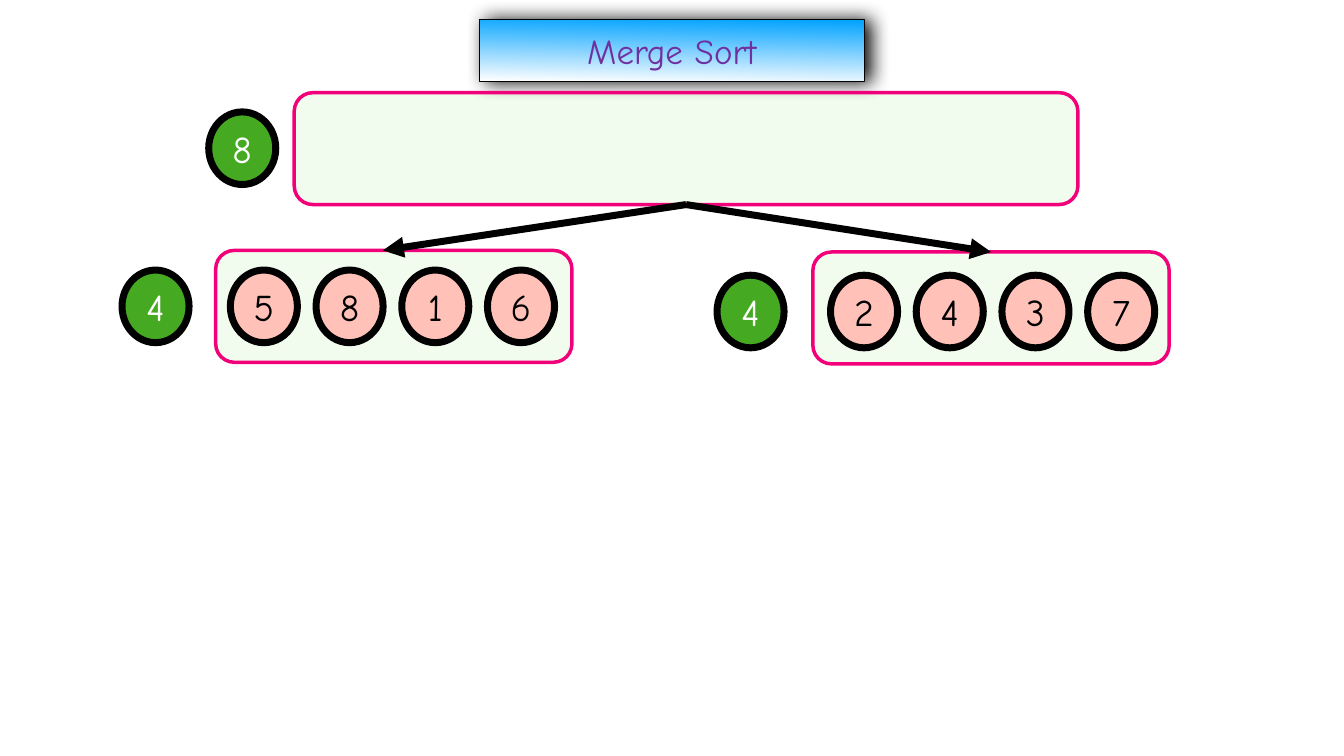
from dataclasses import dataclass

from lxml.etree import SubElement
from pptx import Presentation
from pptx.dml.color import RGBColor
from pptx.enum.shapes import MSO_CONNECTOR as Connector, MSO_SHAPE as Shape
from pptx.enum.text import MSO_ANCHOR as Anchor, MSO_AUTO_SIZE as AutoSize, PP_ALIGN as Align
from pptx.oxml import parse_xml
from pptx.oxml.ns import nsdecls, qn
from pptx.util import Cm, Pt

FONT = "Comic Neue"
COLORS = {
    "box": "C0EFAF", "box_line": "F10079", "value": "FFC1B8", "count": "45AA21",
    "black": "000000", "white": "FFFFFF", "title": "7030A0", "title_top": "00A2FF",
}
BOX_HEIGHT = 5.64
CIRCLE_WIDTH, CIRCLE_HEIGHT = 3.38, 3.66
VALUE_PITCH = 4.32
BOTTOM, TOP = 2, 0


@dataclass
class Sublist:
    left: float
    top: float
    width: float
    count: str
    count_left: float
    circle_top: float
    value_left: float = 0
    values: str = ""


WHOLE = Sublist(14.83, 4.67, 39.5, "8", 10.52, 5.64)
LEFT_HALF = Sublist(10.87, 12.62, 17.96, "4", 6.15, 13.61, 11.61, "5816")
RIGHT_HALF = Sublist(40.97, 12.7, 17.96, "4", 36.14, 13.87, 41.86, "2437")


def rgb(name: str) -> RGBColor:
    return RGBColor.from_string(COLORS[name])


def set_line(line, color: str, width: float) -> None:
    line.color.rgb = rgb(color)
    line.width = Pt(width)


def write(shape, text: str, size: float, color: str, auto_size) -> None:
    frame = shape.text_frame
    frame.text = text
    frame.word_wrap = True
    frame.auto_size = auto_size
    frame.vertical_anchor = Anchor.MIDDLE
    frame.margin_left = frame.margin_right = Cm(0.15)
    frame.margin_top = frame.margin_bottom = Cm(0.15)
    paragraph = frame.paragraphs[0]
    paragraph.alignment = Align.CENTER
    font = paragraph.runs[0].font
    font.name, font.size, font.color.rgb = FONT, Pt(size), rgb(color)


def draw_title(title) -> None:
    title.left, title.top, title.width, title.height = Cm(24.16), Cm(0.99), Cm(19.41), Cm(3.1)
    properties = title.element.spPr
    properties.append(parse_xml(
        f'<a:prstGeom {nsdecls("a")} prst="roundRect"><a:avLst>'
        '<a:gd name="adj" fmla="val 5900"/></a:avLst></a:prstGeom>'))
    title.fill.gradient()
    title.fill.gradient_angle = 269
    for stop, color in zip(title.fill.gradient_stops, ("title_top", "white")):
        stop.color.rgb = rgb(color)
    set_line(title.line, "black", 1)
    properties.append(parse_xml(
        f'<a:effectLst {nsdecls("a")}><a:outerShdw blurRad="{Pt(28)}" dist="{Pt(9)}" dir="0">'
        f'<a:srgbClr val="{COLORS["black"]}"><a:alpha val="97000"/></a:srgbClr>'
        '</a:outerShdw></a:effectLst>'))
    write(title, "Merge Sort", 50, "title", AutoSize.NONE)


def draw_box(shapes, sublist: Sublist):
    box = shapes.add_shape(Shape.ROUNDED_RECTANGLE, Cm(sublist.left), Cm(sublist.top),
                           Cm(sublist.width), Cm(BOX_HEIGHT))
    box.shadow.inherit = False
    box.fill.solid()
    box.fill.fore_color.rgb = rgb("box")
    fill_color = box.element.spPr.find(qn("a:solidFill"))[0]
    SubElement(fill_color, qn("a:alpha"), val="21000")
    set_line(box.line, "box_line", 5)
    return box


def draw_circle(shapes, left: float, top: float, number: str, fill: str, color: str) -> None:
    circle = shapes.add_shape(Shape.OVAL, Cm(left), Cm(top), Cm(CIRCLE_WIDTH), Cm(CIRCLE_HEIGHT))
    circle.shadow.inherit = False
    circle.fill.solid()
    circle.fill.fore_color.rgb = rgb(fill)
    set_line(circle.line, "black", 10)
    write(circle, number, 54, color, AutoSize.SHAPE_TO_FIT_TEXT)


def draw_arrow(shapes, parent, end_x: float, end_y: float):
    arrow = shapes.add_connector(Connector.STRAIGHT, 0, 0, Cm(end_x), Cm(end_y))
    arrow.begin_connect(parent, BOTTOM)
    set_line(arrow.line, "black", 10)
    SubElement(arrow.line._get_or_add_ln(), qn("a:tailEnd"), type="triangle")
    SubElement(arrow.element.spPr, qn("a:effectLst"))
    return arrow


def main() -> None:
    deck = Presentation()
    deck.slide_width, deck.slide_height = Cm(67.74), Cm(38.1)
    shapes = deck.slides.add_slide(deck.slide_layouts[5]).shapes
    draw_title(shapes.title)

    # List boxes
    sublists = (LEFT_HALF, RIGHT_HALF, WHOLE)
    _, right_box, whole_box = [draw_box(shapes, sublist) for sublist in sublists]

    # Values and the length of each list
    for sublist in sublists:
        for index, value in enumerate(sublist.values):
            draw_circle(shapes, sublist.value_left + index * VALUE_PITCH,
                        sublist.circle_top, value, "value", "black")
        draw_circle(shapes, sublist.count_left, sublist.circle_top,
                    sublist.count, "count", "white")

    # Split arrows; the left one lands off the middle of its box
    draw_arrow(shapes, whole_box, 19.3, LEFT_HALF.top)
    right_arrow = draw_arrow(shapes, whole_box, 49.95, RIGHT_HALF.top)
    right_arrow.end_connect(right_box, TOP)

    deck.save("out.pptx")


if __name__ == "__main__":
    main()
